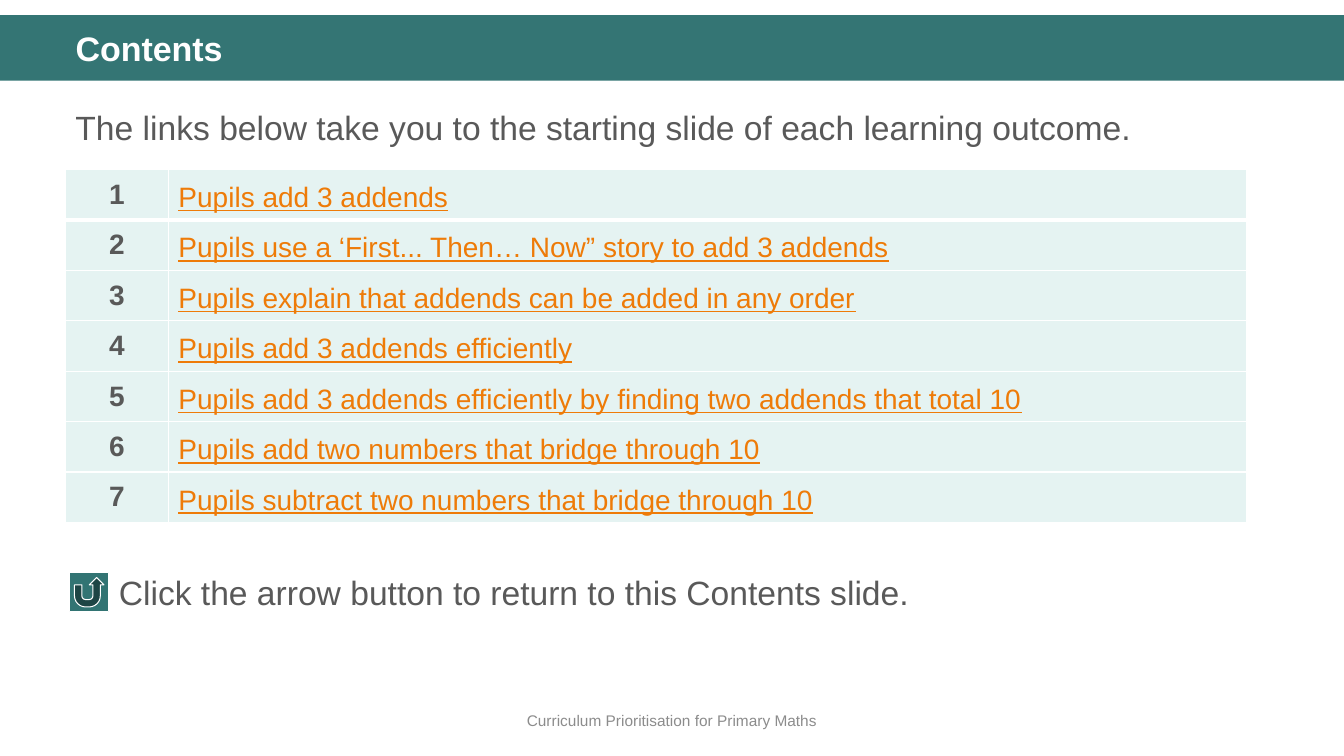
from lxml import etree
from pptx import Presentation
from pptx.dml.color import RGBColor as RGB
from pptx.enum.shapes import MSO_SHAPE as SHAPE
from pptx.enum.text import MSO_ANCHOR as ANCHOR, PP_ALIGN as ALIGN
from pptx.oxml.ns import qn
from pptx.util import Inches, Pt

# Content
TITLE = "Contents"
INTRO = "The links below take you to the starting slide of each learning outcome."
TOPICS = [
    "Pupils add 3 addends",
    "Pupils use a ‘First... Then… Now” story to add 3 addends",
    "Pupils explain that addends can be added in any order",
    "Pupils add 3 addends efficiently",
    "Pupils add 3 addends efficiently by finding two addends that total 10",
    "Pupils add two numbers that bridge through 10",
    "Pupils subtract two numbers that bridge through 10",
]
HINT = "Click the arrow button to return to this Contents slide."
FOOTER = "Curriculum Prioritisation for Primary Maths"

# Formats
TEAL, MINT, WHITE, GREY = "347574", "E5F3F2", "FFFFFF", "595959"
HEAD = dict(size=Pt(24.3), bold=True, color=WHITE)
BODY = dict(size=Pt(24), color=GREY)
SMALL = dict(size=Pt(11), color="8C8C8C")
NUMBER = dict(size=Pt(20), bold=True, color=GREY)
LINK = dict(size=Pt(20), bold=False, underline=True, color="EE7B08")
LEFT, COLS, ROW = 0.65, (1.02, 10.69), 0.47


def rgb(code):
    return RGB.from_string(code)


def box(*sizes):
    return [Inches(n) for n in sizes]


def write(frame, text, look, **para):
    """Put one formatted line into a text frame."""
    frame.word_wrap = True
    line = frame.paragraphs[0]
    for name, value in para.items():
        setattr(line, name, value)
    run = line.add_run()
    run.text = text
    run.font.name = "Arial"
    for name, value in look.items():
        if name == "color":
            run.font.color.rgb = rgb(value)
        else:
            setattr(run.font, name, value)


def label(place, text, look, anchor=ANCHOR.TOP, **para):
    frame = shapes.add_textbox(*box(*place)).text_frame
    frame.vertical_anchor = anchor
    write(frame, text, look, **para)


def block(kind, place, color):
    shape = shapes.add_shape(kind, *box(*place))
    shape.shadow.inherit = False
    shape.fill.solid()
    shape.fill.fore_color.rgb = rgb(color)
    return shape


def edge(cell, widths):
    """Draw white borders: left, right, top, bottom."""
    props = cell._tc.get_or_add_tcPr()
    for i, (side, width) in enumerate(zip("LRTB", widths)):
        line = etree.Element(qn(f"a:ln{side}"), w=str(Pt(width)))
        fill = etree.SubElement(line, qn("a:solidFill"))
        etree.SubElement(fill, qn("a:srgbClr"), val=WHITE)
        props.insert(i, line)


deck = Presentation()
deck.slide_width, deck.slide_height = box(13.33, 7.5)
slide = deck.slides.add_slide(deck.slide_layouts[5])
shapes = slide.shapes

# Title on its band
band = block(SHAPE.RECTANGLE, (0, 0.15, 13.33, 0.65), TEAL)
band.line.fill.background()
title = shapes.title
title.left, title.top, title.width, title.height = box(LEFT, 0.27, 12.18, 0.47)
title.text_frame.vertical_anchor = ANCHOR.TOP
write(title.text_frame, TITLE, HEAD, alignment=ALIGN.LEFT, line_spacing=0.9)
title.element.getparent().append(title.element)

# Footer and introduction
label((0, 6.95, 13.33, 0.4), FOOTER, SMALL, ANCHOR.MIDDLE, alignment=ALIGN.CENTER)
label((LEFT, 0.93, 12.18, 0.6), INTRO, BODY, line_spacing=1.2, space_before=Pt(10))

# Table of topics
place = box(LEFT, 1.68, sum(COLS), ROW * len(TOPICS))
table = shapes.add_table(len(TOPICS), len(COLS), *place).table
table.first_row = table.horz_banding = False
for col, width in zip(table.columns, COLS):
    col.width = Inches(width)
for i, topic in enumerate(TOPICS):
    table.rows[i].height = Inches(ROW)
    number, link = table.rows[i].cells
    for cell in (number, link):
        cell.vertical_anchor = ANCHOR.MIDDLE
        cell.fill.solid()
        cell.fill.fore_color.rgb = rgb(MINT)
        edge(cell, (1, 1, 3 if i == 1 else 1, 3 if i == 0 else 1))
    write(number.text_frame, str(i + 1), NUMBER, alignment=ALIGN.CENTER)
    write(link.text_frame, topic, LINK, line_spacing=1.2)

# Return button and its hint
button = block(SHAPE.ACTION_BUTTON_RETURN, (0.69, 5.68, 0.39, 0.39), "327473")
button.line.color.rgb = rgb(WHITE)
button.line.width = Pt(0.75)
label((1.08, 5.62, 11.32, 0.5), HINT, BODY)

deck.save("out.pptx")
